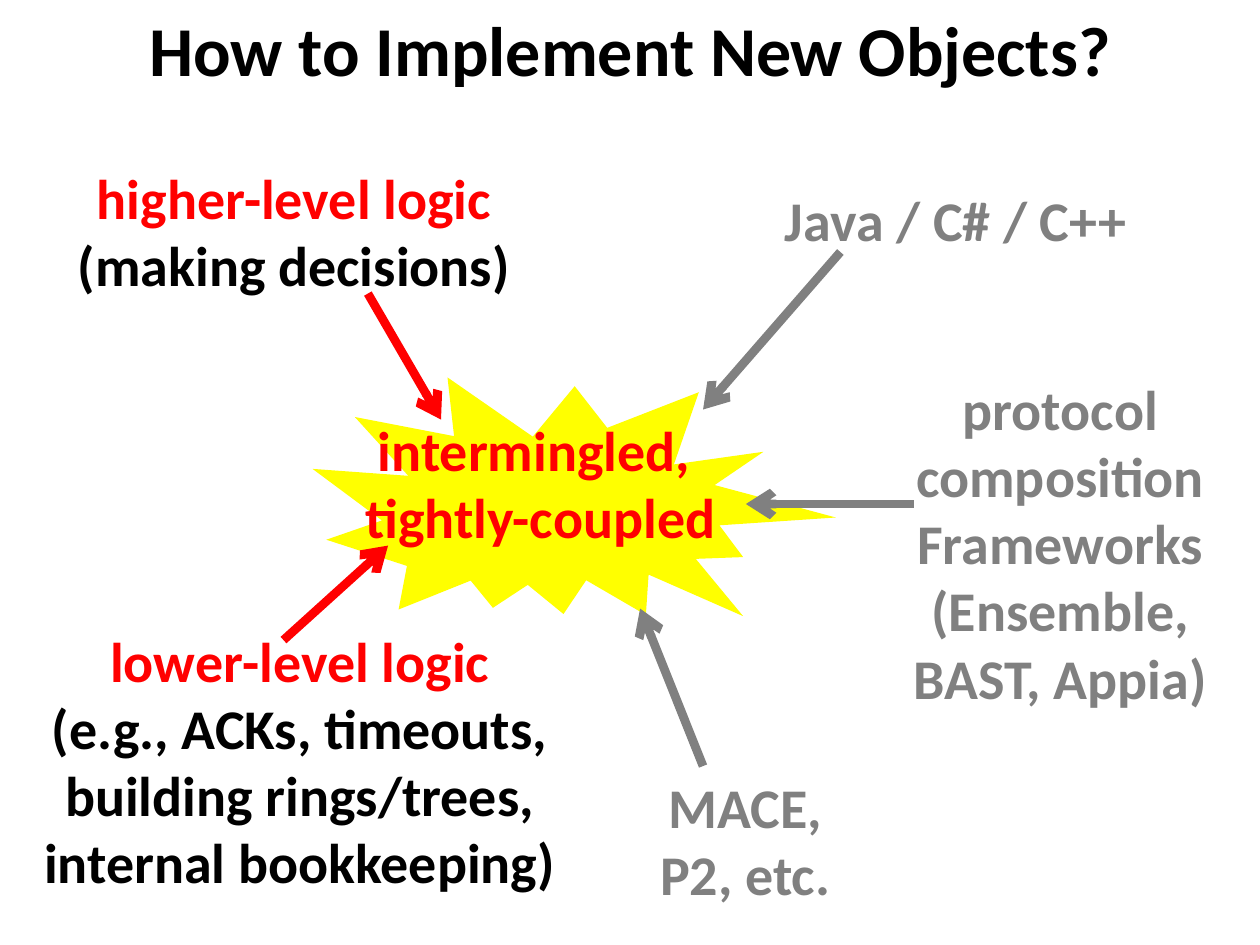
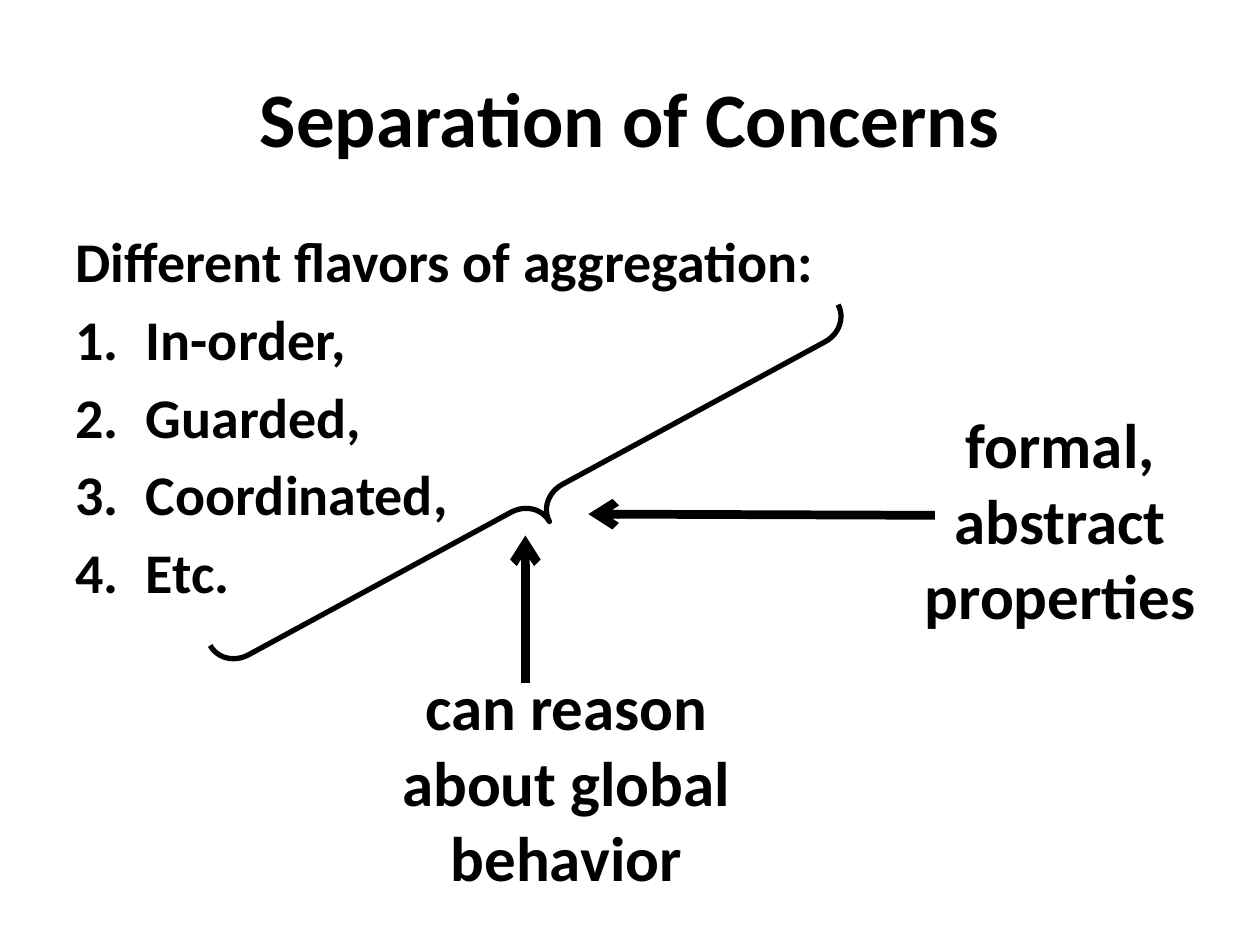
import lxml.etree
import pptx
import pptx.dml.color
import pptx.enum.shapes
import pptx.enum.text
import pptx.oxml.ns
import pptx.util

Inches = pptx.util.Inches
Pt = pptx.util.Pt
SHAPE = pptx.enum.shapes.MSO_SHAPE
ALIGN = pptx.enum.text.PP_ALIGN
ANCHOR = pptx.enum.text.MSO_ANCHOR
qn = pptx.oxml.ns.qn

# Shared look
FONT = "Calibri"
BLACK, RED, GRAY, YELLOW = "000000", "FF0000", "808080", "FFFF00"
ARROW_WIDTH = 5


def rgb(color):
    return pptx.dml.color.RGBColor.from_string(color)


def place(sp, left, top, width, height):
    sp.left, sp.top = Inches(left), Inches(top)
    sp.width, sp.height = Inches(width), Inches(height)


def write(tf, lines, size=32, color=BLACK, first_color=None,
          align=ALIGN.CENTER, anchor=ANCHOR.TOP, space_before=0):
    """Write one bold paragraph per line; first_color recolours the first."""
    tf.word_wrap = True
    tf.auto_size = pptx.enum.text.MSO_AUTO_SIZE.NONE
    tf.vertical_anchor = anchor
    for i, line in enumerate(lines):
        p = tf.add_paragraph() if i else tf.paragraphs[0]
        p.alignment = align
        p.space_before = Pt(space_before)
        r = p.add_run()
        r.text = line
        r.font.name, r.font.size, r.font.bold = FONT, Pt(size), True
        r.font.color.rgb = rgb(first_color if first_color and i == 0 else color)


def add_slide(prs, title, box, **fmt):
    slide = prs.slides.add_slide(prs.slide_layouts[5])
    place(slide.shapes.title, *box)
    write(slide.shapes.title.text_frame, [title], **fmt)
    return slide


def add_label(slide, box, lines, **fmt):
    sp = slide.shapes.add_textbox(*map(Inches, box))
    write(sp.text_frame, lines, **fmt)
    return sp


def add_shape(slide, kind, box, rotation, fill=None, line=None, width=3):
    sp = slide.shapes.add_shape(kind, *map(Inches, box))
    sp.rotation = rotation
    sp.shadow.inherit = False
    if fill:
        sp.fill.solid()
        sp.fill.fore_color.rgb = rgb(fill)
    else:
        sp.fill.background()
    if line:
        sp.line.color.rgb = rgb(line)
        sp.line.width = Pt(width)
    else:
        sp.line.fill.background()
    return sp


def add_arrow(slide, start, tip, color=BLACK):
    line = slide.shapes.add_connector(
        pptx.enum.shapes.MSO_CONNECTOR.STRAIGHT, *map(Inches, start + tip))
    line.line.color.rgb = rgb(color)
    line.line.width = Pt(ARROW_WIDTH)
    ln = line.line._get_or_add_ln()
    lxml.etree.SubElement(ln, qn("a:tailEnd"), type="arrow")
    lxml.etree.SubElement(line._element.spPr, qn("a:effectLst"))


def set_indent(p, indent, numbered):
    pPr = p._p.get_or_add_pPr()
    pPr.set("marL", str(Inches(indent)))
    pPr.set("indent", str(-Inches(indent)))
    if numbered:
        lxml.etree.SubElement(pPr, qn("a:buFont"), typeface=FONT)
        lxml.etree.SubElement(pPr, qn("a:buAutoNum"), type="arabicPeriod")


def build_new_objects(prs):
    slide = add_slide(prs, "How to Implement New Objects?", (0, 0, 10, 0.75), size=40)
    add_shape(slide, SHAPE.EXPLOSION2, (2.47, 2.89, 4.12, 2.26), 14.3, fill=YELLOW)

    # Existing approaches
    for box, lines in [
        ((5.67, 1.42, 3.83, 0.64), ["Java / C# / C++"]),
        ((7, 2.92, 2.83, 2.79),
         ["protocol", "composition", "Frameworks", "(Ensemble, BAST, Appia)"]),
        ((5, 6.08, 1.83, 1.18), ["MACE,", "P2, etc."]),
    ]:
        add_label(slide, box, lines, color=GRAY)

    # Two levels of logic and the tangle between them
    add_label(slide, (0.25, 1.25, 4.17, 1.18),
              ["higher-level logic", "(making decisions)"], first_color=RED)
    add_label(slide, (0.17, 4.92, 4.42, 2.26),
              ["lower-level logic", "(e.g., ACKs, timeouts,",
               "building rings/trees,", "internal bookkeeping)"], first_color=RED)
    add_label(slide, (2.58, 3.25, 3.42, 1.18),
              ["intermingled, ", "tightly-coupled"], color=RED)

    # Arrows into the tangle
    for start, tip, color in [
        ((6.67, 2), (5.58, 3.25), GRAY),
        ((7.25, 4), (5.92, 4), GRAY),
        ((5.58, 6.08), (5.08, 4.83), GRAY),
        ((2.92, 2.33), (3.5, 3.33), RED),
        ((2.25, 5.08), (3.08, 4.33), RED),
    ]:
        add_arrow(slide, start, tip, color)


def build_separation(prs):
    slide = add_slide(prs, "Separation of Concerns", (0.5, 0.3, 9, 1.25),
                      size=44, anchor=ANCHOR.MIDDLE)

    # Numbered flavors under a lead line
    flavors = add_label(slide, (0.5, 1.75, 9, 4.95),
                        ["Different flavors of aggregation:", "In-order,",
                         "Guarded,", "Coordinated,", "Etc."],
                        align=ALIGN.LEFT, space_before=6)
    for i, p in enumerate(flavors.text_frame.paragraphs):
        set_indent(p, 0.56 if i else 0.38, numbered=i > 0)

    # Brace over the list
    brace = add_shape(slide, SHAPE.RIGHT_BRACE, (4.05, 1.12, 0.42, 5.67), 61.5, line=BLACK)
    brace.adjustments[0] = 0.55

    # What the separation gives
    add_label(slide, (7, 3.17, 2.83, 1.92), ["formal, abstract", "properties"], size=36)
    add_label(slide, (3.08, 5.25, 2.83, 1.92),
              ["can reason", "about global", "behavior"], size=36)
    add_arrow(slide, (7.42, 4.09), (4.67, 4.08))
    add_arrow(slide, (4.17, 5.42), (4.17, 4.25))


def main():
    prs = pptx.Presentation()
    prs.slide_width, prs.slide_height = Inches(10), Inches(7.5)
    build_new_objects(prs)
    build_separation(prs)
    prs.save("out.pptx")


if __name__ == "__main__":
    main()
